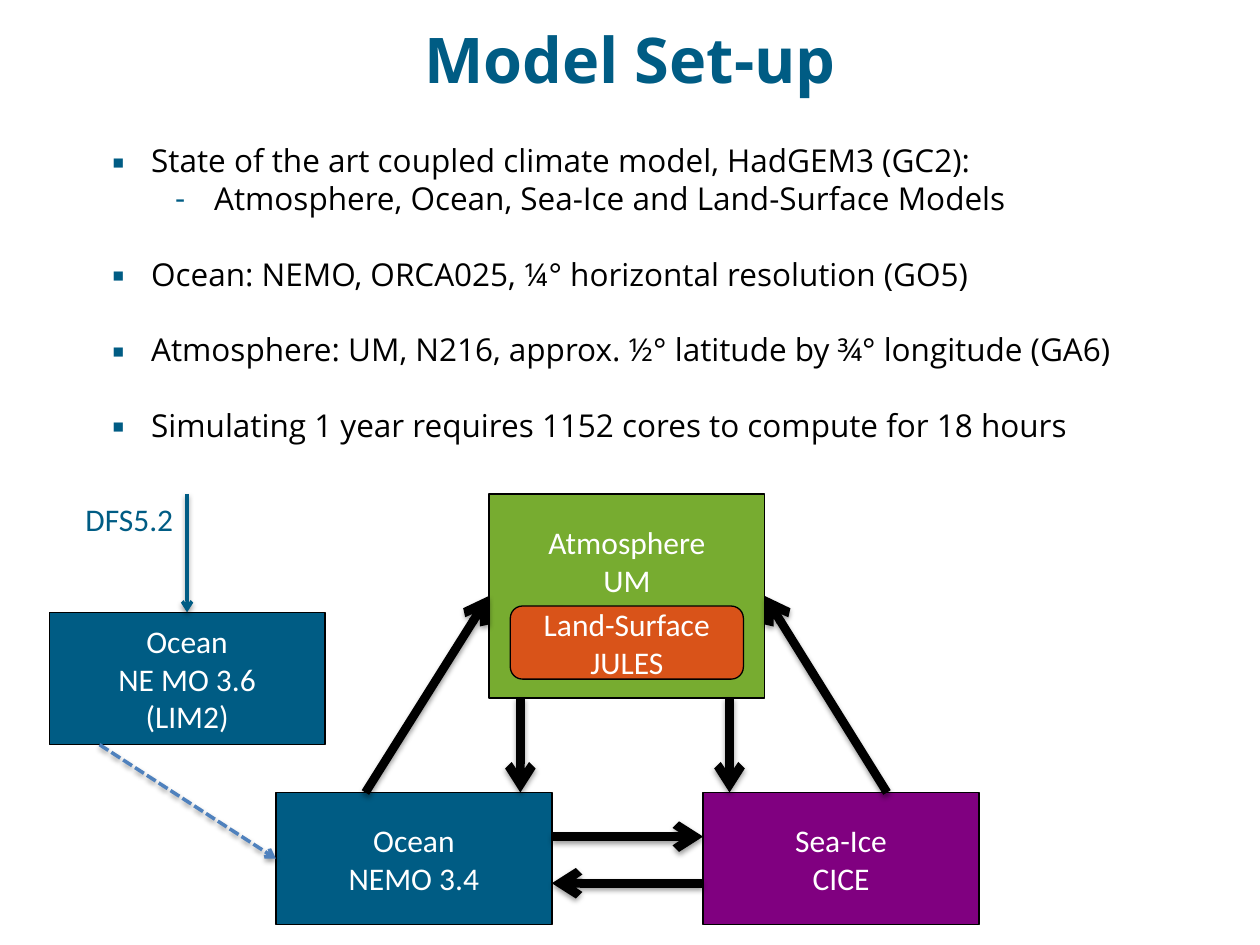
from lxml import etree
from pptx import Presentation
from pptx import util as u
from pptx.dml.color import RGBColor
from pptx.enum import dml, shapes, text
from pptx.oxml import parse_xml
from pptx.oxml.ns import nsdecls, qn

BLUE, BLACK, WHITE = "005C84", "000000", "FFFFFF"
BOX_W, BOX_H = 2.19, 1.05


def rgb(value):
    """Turn a hex string into a colour."""
    return RGBColor.from_string(value)


def apply(obj, **values):
    """Set every given attribute on an object."""
    for name, value in values.items():
        setattr(obj, name, value)


def inches(*values):
    """Convert numbers to lengths."""
    return [u.Inches(v) for v in values]


def place(sp, box):
    """Move and size a shape to a box of left, top, width and height."""
    apply(sp, **dict(zip(("left", "top", "width", "height"), inches(*box))))


def style(p, font="Calibri", size=18, color=WHITE, bold=False):
    """Format the runs of a paragraph."""
    for r in p.runs:
        apply(r.font, name=font, size=u.Pt(size), bold=bold)
        r.font.color.rgb = rgb(color)


def add_bullet(p, char, margin, hang):
    """Give a paragraph a blue bullet with a hanging indent."""
    pPr = p._p.get_or_add_pPr()
    pPr.set("marL", str(u.Inches(margin)))
    pPr.set("indent", str(-u.Inches(hang)))
    clr = etree.SubElement(pPr, qn("a:buClr"))
    etree.SubElement(clr, qn("a:srgbClr"), val=BLUE)
    etree.SubElement(pPr, qn("a:buFont"), typeface="Open Sans")
    etree.SubElement(pPr, qn("a:buChar"), char=char)


def title(s, box):
    """Fill the title placeholder."""
    sp = s.shapes.title
    place(sp, box)
    tf = sp.text_frame
    tf.text = "Model Set-up"
    apply(tf, vertical_anchor=text.MSO_ANCHOR.MIDDLE, auto_size=text.MSO_AUTO_SIZE.NONE)
    p = tf.paragraphs[0]
    p.alignment = text.PP_ALIGN.CENTER
    style(p, "Open Sans", 36, BLUE, True)


def bullets(s, box):
    """Fill the body placeholder with the two-level list."""
    items = [
        (0, 0, "State of the art coupled climate model, HadGEM3 (GC2):"),
        (1, 0, "Atmosphere, Ocean, Sea-Ice and Land-Surface Models"),
        (0, 1, "Ocean: NEMO, ORCA025, ¼° horizontal resolution (GO5)"),
        (0, 1, "Atmosphere: UM, N216, approx. ½° latitude by ¾° longitude (GA6)"),
        (0, 1, "Simulating 1 year requires 1152 cores to compute for 18 hours"),
    ]
    sp = s.placeholders[1]
    place(sp, box)
    tf = sp.text_frame
    tf.text = "\n".join(item[2] for item in items)
    tf.auto_size = text.MSO_AUTO_SIZE.NONE
    pitch = u.Pt(21.6)
    for p, (level, gap, _) in zip(tf.paragraphs, items):
        apply(p, level=level, line_spacing=pitch, space_before=pitch * gap, space_after=u.Pt(0))
        add_bullet(p, "▪-"[level], 0.31 + 0.5 * level, 0.31)
        style(p, "Open Sans", color=BLACK)


def node(s, box, label, fill, kind=shapes.MSO_SHAPE.RECTANGLE, bottom=0.05):
    """Add an outlined block with a centred white label."""
    sp = s.shapes.add_shape(kind, *inches(*box))
    sp.shadow.inherit = False
    sp.fill.solid()
    sp.fill.fore_color.rgb = rgb(fill)
    sp.line.color.rgb = rgb(BLACK)
    sp.line.width = u.Pt(0.75)
    tf = sp.text_frame
    tf.text = label
    apply(tf, word_wrap=True, vertical_anchor=text.MSO_ANCHOR.MIDDLE,
          margin_bottom=u.Inches(bottom))
    for p in tf.paragraphs:
        p.alignment = text.PP_ALIGN.CENTER
        style(p)
    return sp


def arrow(s, start, end, color=BLACK, width=5, dash=None, target=None):
    """Add a shadowed arrow, joined to a target shape and side if given."""
    sp = s.shapes.add_connector(shapes.MSO_CONNECTOR.STRAIGHT, *inches(*start, *end))
    if target:
        sp.end_connect(*target)
    sp.line.color.rgb = rgb(color)
    apply(sp.line, width=u.Pt(width), dash_style=dash)
    etree.SubElement(sp.line._get_or_add_ln(), qn("a:tailEnd"), type="arrow")
    sp._element.spPr.append(parse_xml(
        f'<a:effectLst {nsdecls("a")}><a:outerShdw blurRad="{u.Pt(3.1)}" '
        f'dist="{u.Pt(1.6)}" dir="5400000" rotWithShape="0"><a:srgbClr val="{BLACK}">'
        '<a:alpha val="38000"/></a:srgbClr></a:outerShdw></a:effectLst>'))


def coupled_model(s, x, y):
    """Draw the coupled components and return the ocean block."""
    air_x, ice_x, low_y = x + 1.69, x + 3.39, y + 2.37
    air_h = 1.62
    air = node(s, (air_x, y, BOX_W, air_h), "Atmosphere\vUM", "77AC30", bottom=0.61)
    node(s, (air_x + 0.17, y + 0.89, 1.85, 0.58), "Land-Surface\nJULES", "D95319",
         shapes.MSO_SHAPE.ROUNDED_RECTANGLE)
    ocean = node(s, (x, low_y, BOX_W, BOX_H), "Ocean\nNEMO 3.4", BLUE)
    node(s, (ice_x, low_y, BOX_W, BOX_H), "Sea-Ice\nCICE", "800080")
    for down_x in (air_x + 0.25, air_x + 1.91):
        arrow(s, (down_x, y + air_h), (down_x, low_y))
    for up_x, side_x, side in ((x + 0.71, air_x, 1), (ice_x + 1.46, air_x + BOX_W, 3)):
        arrow(s, (up_x, low_y), (side_x, y + air_h / 2), target=(air, side))
    arrow(s, (x + BOX_W, low_y + 0.35), (ice_x, low_y + 0.35))
    arrow(s, (ice_x, low_y + 0.72), (x + BOX_W, low_y + 0.72))
    return ocean


def forced_ocean(s, x, y, ocean):
    """Draw the forced ocean block, its input and its link to the coupled ocean."""
    top, mid = y + 0.94, x + BOX_W / 2
    forced = node(s, (x, top, BOX_W, BOX_H), "Ocean\nNE MO 3.6\n(LIM2)", BLUE)
    arrow(s, (x + 0.4, top + BOX_H), (x + 1.8, y + 2.89), "4F81BD", 2,
          dml.MSO_LINE.SQUARE_DOT, (ocean, 1))
    arrow(s, (mid, y), (mid, top), BLUE, 2, target=(forced, 0))
    tf = s.shapes.add_textbox(*inches(x + 0.19, y, 0.91, 0.4)).text_frame
    apply(tf, text="DFS5.2", word_wrap=False)
    style(tf.paragraphs[0], color=BLUE)


def main():
    """Build the slide and save it."""
    prs = Presentation()
    apply(prs, slide_width=u.Inches(10), slide_height=u.Inches(7.5))
    s = prs.slides.add_slide(prs.slide_layouts[1])
    title(s, (0.39, -0.27, 9.22, 1.47))
    bullets(s, (0.79, 1.07, 8.62, 2.52))
    ocean = coupled_model(s, 2.19, 3.92)
    forced_ocean(s, 0.39, 3.92, ocean)
    prs.save("out.pptx")


if __name__ == "__main__":
    main()
